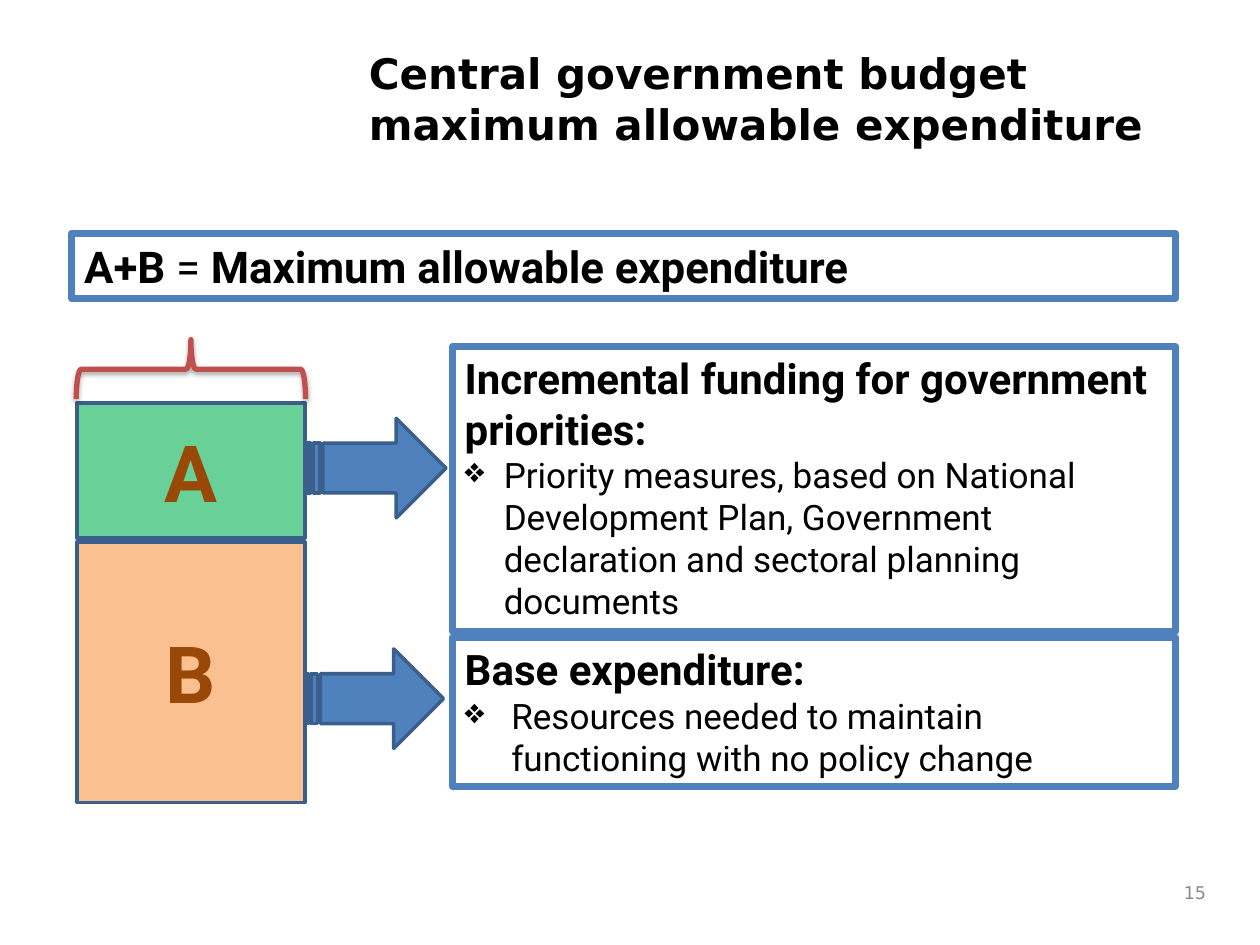
from dataclasses import dataclass
from typing import Optional

import lxml.etree
import pptx
import pptx.dml.color
import pptx.enum.shapes
import pptx.enum.text
import pptx.oxml.ns
import pptx.util

Inches = pptx.util.Inches
Pt = pptx.util.Pt
Shape = pptx.enum.shapes.MSO_SHAPE
Align = pptx.enum.text.PP_ALIGN
Anchor = pptx.enum.text.MSO_ANCHOR
AutoSize = pptx.enum.text.MSO_AUTO_SIZE
qn = pptx.oxml.ns.qn

COLORS = {
    "text": "000000",
    "page_number": "898989",
    "blue": "4F81BD",
    "dark_blue": "3A5F8C",
    "green": "00B050",
    "orange": "FAC090",
    "letter": "984807",
    "brace": "C0504D",
}
BLOCK_LEFT, BLOCK_WIDTH = 0.61, 1.81
PANEL_LEFT, PANEL_WIDTH = 3.59, 5.74


@dataclass
class Span:
    text: str
    size: float
    bold: bool = False
    color: str = "text"
    font: str = "Roboto"


@dataclass
class Para:
    spans: list[Span]
    align: Align = Align.LEFT
    bullet_indent: float = 0


@dataclass
class Box:
    left: float
    top: float
    width: float
    height: float
    shape: Shape = Shape.RECTANGLE
    fill: Optional[str] = None
    opacity: int = 100
    line: str = "dark_blue"
    line_width: float = 2
    rotation: float = 0


def rgb(name: str) -> pptx.dml.color.RGBColor:
    return pptx.dml.color.RGBColor.from_string(COLORS[name])


def write(holder, paras: list[Para], **frame_format) -> None:
    frame = holder.text_frame
    for name, value in {"word_wrap": True, **frame_format}.items():
        setattr(frame, name, value)
    for index, item in enumerate(paras):
        para = frame.add_paragraph() if index else frame.paragraphs[0]
        para.alignment = item.align
        if item.bullet_indent:
            indent = Inches(item.bullet_indent)
            properties = para._p.get_or_add_pPr()
            properties.set("marL", str(indent))
            properties.set("indent", str(-indent))
            lxml.etree.SubElement(properties, qn("a:buChar"), char="❖")
        for span in item.spans:
            run = para.add_run()
            run.text = span.text
            font_format = {"size": Pt(span.size), "bold": span.bold, "name": span.font}
            for name, value in font_format.items():
                setattr(run.font, name, value)
            run.font.color.rgb = rgb(span.color)


def draw_box(page, box: Box):
    shape = page.shapes.add_shape(
        box.shape, Inches(box.left), Inches(box.top), Inches(box.width), Inches(box.height)
    )
    shape.shadow.inherit = False
    shape.rotation = box.rotation
    shape.line.color.rgb = rgb(box.line)
    shape.line.width = Pt(box.line_width)
    if box.fill is None:
        shape.fill.background()
    else:
        shape.fill.solid()
        shape.fill.fore_color.rgb = rgb(box.fill)
        if box.opacity < 100:
            color = shape._element.spPr.find(qn("a:solidFill"))[0]
            lxml.etree.SubElement(color, qn("a:alpha"), val=str(box.opacity * 1000))
    return shape


def draw_label(page, left: float, top: float, width: float, height: float,
               para: Para, anchor: Anchor) -> None:
    label = page.shapes.add_textbox(Inches(left), Inches(top), Inches(width), Inches(height))
    write(label, [para], vertical_anchor=anchor)


def draw_panel(page, left: float, top: float, width: float, height: float,
               paras: list[Para]) -> None:
    """Draw an outlined, unfilled box that grows with its text."""
    panel = draw_box(page, Box(left, top, width, height, line="blue", line_width=4))
    write(panel, paras, vertical_anchor=Anchor.TOP, auto_size=AutoSize.SHAPE_TO_FIT_TEXT)


def draw_block(page, letter: str, top: float, height: float, fill: str, opacity: int) -> None:
    block = draw_box(page, Box(BLOCK_LEFT, top, BLOCK_WIDTH, height, fill=fill, opacity=opacity))
    write(block, [Para([Span(letter, 45, True, "letter")], Align.CENTER)],
          vertical_anchor=Anchor.MIDDLE)


def add_soft_shadow(shape) -> None:
    effects = shape._element.spPr.find(qn("a:effectLst"))
    shadow = lxml.etree.SubElement(
        effects, qn("a:outerShdw"), blurRad=str(Pt(3.1)), dist=str(Pt(1.8)),
        dir="5400000", rotWithShape="0",
    )
    color = lxml.etree.SubElement(shadow, qn("a:srgbClr"), val=COLORS["text"])
    lxml.etree.SubElement(color, qn("a:alpha"), val="35000")


def main() -> None:
    deck = pptx.Presentation()
    deck.slide_width, deck.slide_height = Inches(10), Inches(7.5)
    page = deck.slides.add_slide(deck.slide_layouts[6])

    title = Span("Central government budget maximum allowable expenditure",
                 24, True, font="DejaVu Sans")
    draw_label(page, 2.83, 0.33, 6.67, 1.17, Para([title]), Anchor.TOP)
    number = Span("15", 10, color="page_number", font="DejaVu Sans")
    draw_label(page, 9.2, 6.92, 0.47, 0.33, Para([number], Align.RIGHT), Anchor.MIDDLE)

    draw_panel(page, 0.57, 1.85, 8.76, 0.52, [Para([
        Span("A+B", 25, True), Span(" = ", 25), Span("Maximum allowable expenditure", 25, True),
    ])])

    draw_block(page, "A", 3.2, 1.07, "green", 59)
    draw_block(page, "B", 4.3, 2.07, "orange", 100)
    for left, top in ((2.44, 3.32), (2.42, 5.15)):
        draw_box(page, Box(left, top, 1.1, 0.79, Shape.STRIPED_RIGHT_ARROW, "blue"))

    explanations = (
        (2.75, 2.26, "Incremental funding for government priorities:", 0.31,
         "Priority measures, based on National Development Plan, "
         "Government declaration and sectoral planning documents"),
        (5.06, 1.18, "Base expenditure:", 0.37,
         "Resources needed to maintain functioning with no policy change"),
    )
    for top, height, heading, indent, detail in explanations:
        draw_panel(page, PANEL_LEFT, top, PANEL_WIDTH, height, [
            Para([Span(heading, 24, True)]),
            Para([Span(detail, 20)], bullet_indent=indent),
        ])

    brace = draw_box(page, Box(1.28, 2.02, 0.47, 1.82, Shape.RIGHT_BRACE,
                               line="brace", line_width=3, rotation=270))
    add_soft_shadow(brace)

    deck.save("out.pptx")


if __name__ == "__main__":
    main()
